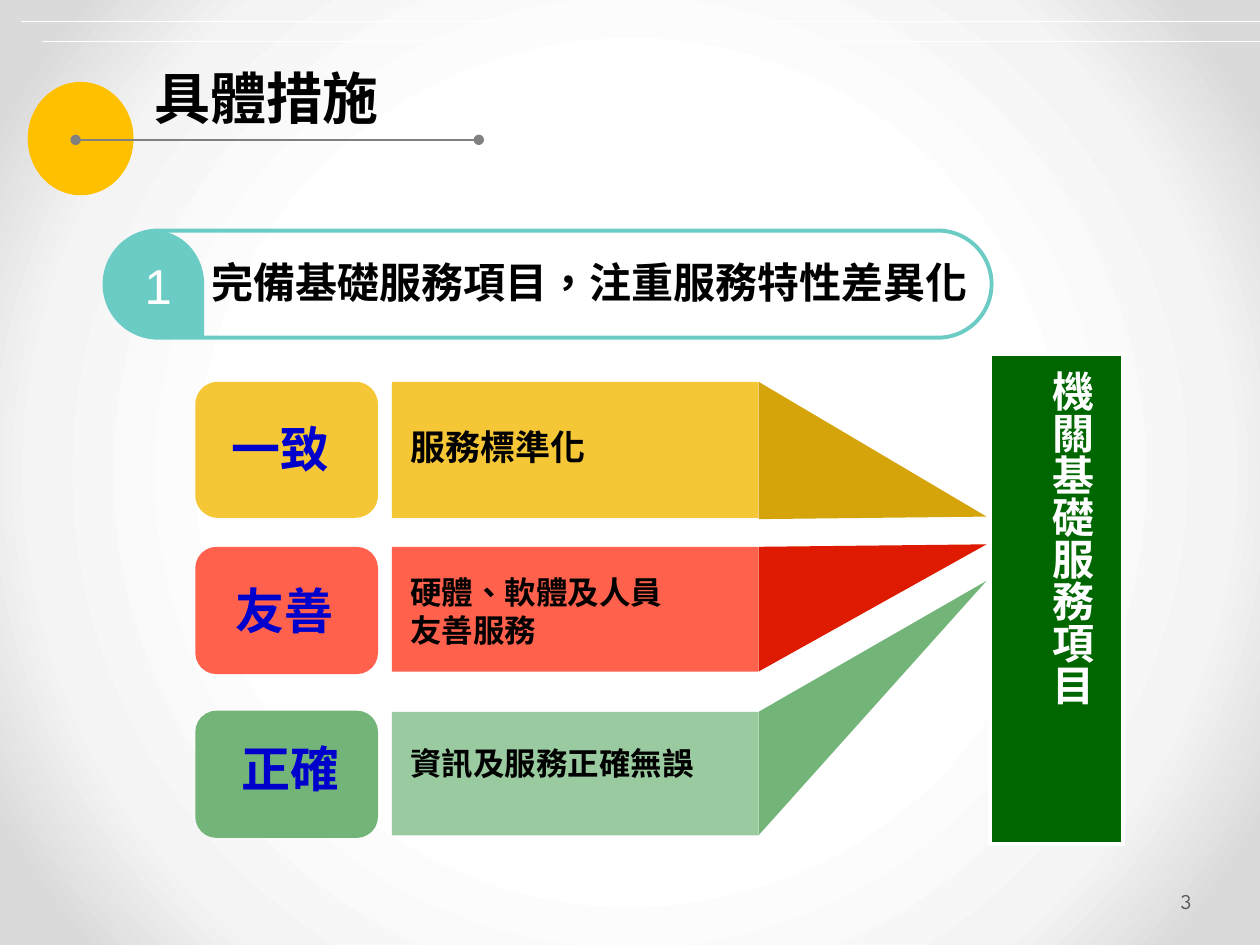
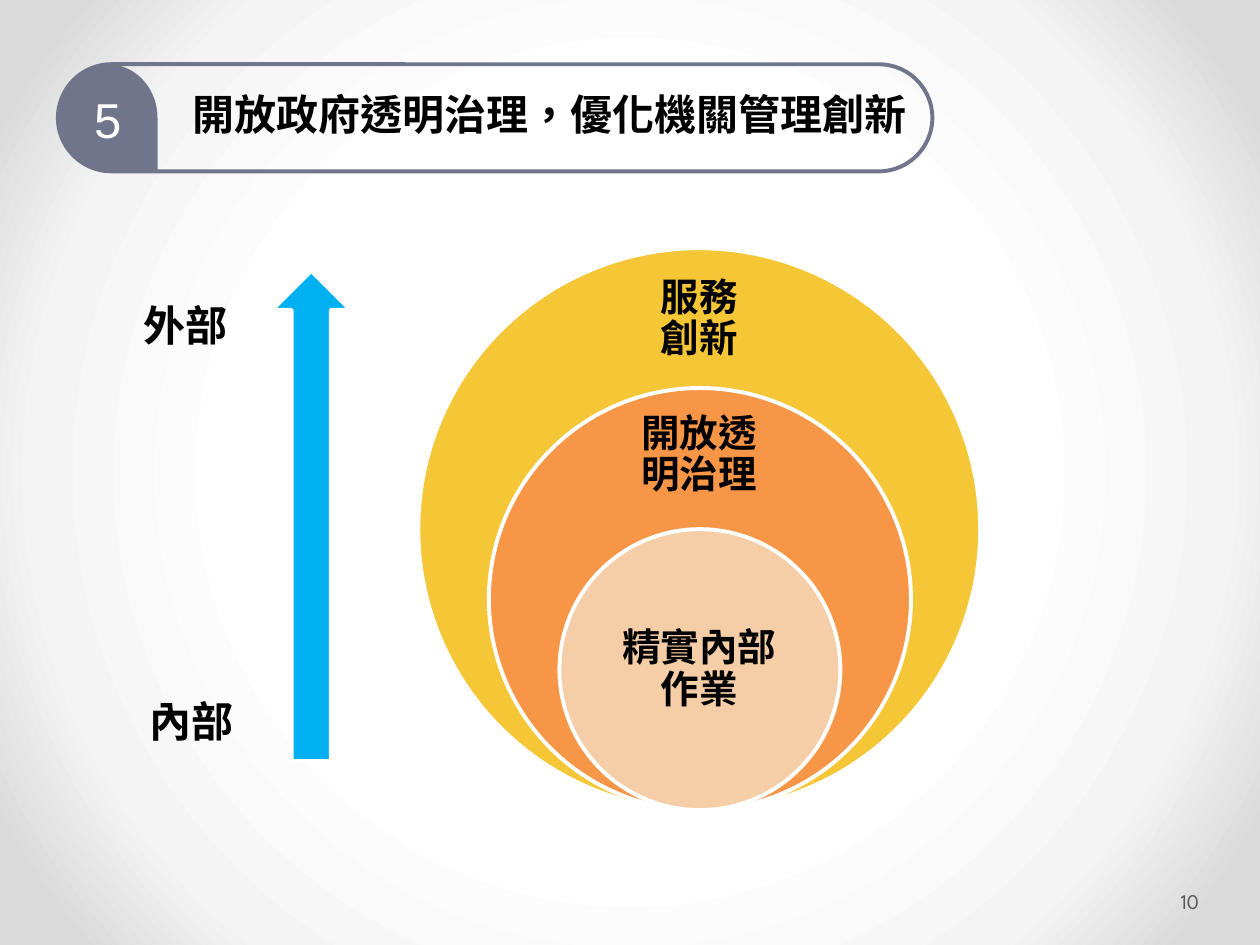
from lxml import etree
from pptx import Presentation
from pptx.dml.color import RGBColor
from pptx.enum.shapes import MSO_CONNECTOR, MSO_SHAPE
from pptx.enum.text import MSO_ANCHOR, MSO_AUTO_SIZE, PP_ALIGN
from pptx.oxml import parse_xml
from pptx.oxml.ns import qn
from pptx.util import Inches, Pt

RECT, ROUND, OVAL = MSO_SHAPE.RECTANGLE, MSO_SHAPE.ROUNDED_RECTANGLE, MSO_SHAPE.OVAL
TEAR, UP_ARROW = MSO_SHAPE.TEAR, MSO_SHAPE.UP_ARROW
LEFT, CENTER = PP_ALIGN.LEFT, PP_ALIGN.CENTER
TOP, MIDDLE = MSO_ANCHOR.TOP, MSO_ANCHOR.MIDDLE
TEXT, OUTLINE = "text", "outline"
ARIAL, NOTO, SPARTAN = "Arial", "Noto Sans CJK SC", "League Spartan"
BLACK, WHITE, BLUE, GREY = "000000", "FFFFFF", "0000CC", "808080"
YELLOW, RED, GREEN = "F5C636", "FF614C", "73B579"
colour = RGBColor.from_string

deck = Presentation()
deck.slide_width, deck.slide_height = Inches(10), Inches(7.5)
UNIT = deck.slide_width // 1000  # the grid has 1000 columns and 750 rows


def add(page, kind, box, fill=None, line=None):
    """Add a shape; box is left, top, width, height, or the points of an OUTLINE."""
    if kind == OUTLINE:
        builder = page.shapes.build_freeform(*box[0], scale=UNIT)
        builder.add_line_segments(box[1:], close=True)
        shape = builder.convert_to_shape()
    elif kind == TEXT:
        return page.shapes.add_textbox(*[cells * UNIT for cells in box])
    else:
        shape = page.shapes.add_shape(kind, *[cells * UNIT for cells in box])
    shape.shadow.inherit = False
    if fill:
        shape.fill.solid()
        shape.fill.fore_color.rgb = colour(fill)
    else:
        shape.fill.background()
    if line:
        shape.line.color.rgb = colour(line)
        shape.line.width = Pt(2.25)
    else:
        shape.line.fill.background()
    return shape


def write(shape, text, size, ink=BLACK, font=ARIAL, bold=True, align=LEFT,
          anchor=TOP, margins=(10, 5), spacing=None):
    frame = shape.text_frame
    frame.text = text
    frame.word_wrap = True
    frame.auto_size = MSO_AUTO_SIZE.NONE
    frame.vertical_anchor = anchor
    frame.margin_left = frame.margin_right = margins[0] * UNIT
    frame.margin_top = frame.margin_bottom = margins[1] * UNIT
    for para in frame.paragraphs:
        para.alignment = align
        para.line_spacing = spacing
        for span in para.runs:
            span.font.size, span.font.bold, span.font.name = Pt(size), bold, font
            span.font.color.rgb = colour(ink)
            properties = span.font._element
            properties.set("lang", "zh-TW")
            etree.SubElement(properties, qn("a:ea")).set("typeface", NOTO)


# Shared background
background = deck.slide_master.background
background.fill.solid()
stops = "".join(f'<a:gs pos="{share}000"><a:srgbClr val="{shade}"/></a:gs>'
                for share, shade in [(50, WHITE), (76, "F4F4F4"), (92, "DADADA")])
solid = background._cSld.find(".//" + qn("a:solidFill"))
solid.getparent().replace(solid, parse_xml(
    '<a:gradFill xmlns:a="http://schemas.openxmlformats.org/drawingml/2006/main" '
    f'rotWithShape="1"><a:gsLst>{stops}</a:gsLst><a:path path="circle">'
    '<a:fillToRect l="50000" t="50000" r="50000" b="50000"/></a:path></a:gradFill>'))

# Shared parts: page number and numbered banner
measures, openness = [deck.slides.add_slide(deck.slide_layouts[5]) for _ in range(2)]
banners = [
    (measures, "3", "1", 83, 183, 704, "6BCBC5", 7),
    (openness, "10", "5", 46, 51, 694, "70758C", 4),
]
for page, page_number, step, left, top, width, tint, shift in banners:
    write(add(page, TEXT, (934, 695, 61, 40)), page_number, 12, "595959", SPARTAN,
          bold=False, anchor=MIDDLE, margins=(3, 5))
    banner = add(page, ROUND, (left, top, width, 85), line=tint)
    banner.adjustments[0] = 0.5
    drop = add(page, TEAR, (left, top, 79, 85), tint)
    drop._element.spPr.get_or_add_xfrm().set("flipV", "1")
    write(add(page, TEXT, (left + shift, top + 15, 71, 57)), step, 28, WHITE,
          bold=False, align=CENTER)

# Titles
heading = add(measures, TEXT, (158, 205, 621, 44))
write(heading, "完備基礎服務項目，注重服務特性差異化", 24, spacing=Pt(24))
for page, box in [(measures, (123, 50, 487, 54)), (openness, (143, 72, 631, 44))]:
    title = page.shapes.title
    title.left, title.top, title.width, title.height = [cells * UNIT for cells in box]
write(measures.shapes.title, "具體措施", 32, margins=(0, 0))
write(openness.shapes.title, "開放政府透明治理，優化機關管理創新", 24, spacing=Pt(24))

# Measures: title ornament
add(measures, OVAL, (22, 65, 84, 90), "FFC000")
rules = [(17, 17, 1000, WHITE, 0.25), (33, 33, 1000, WHITE, 0.25), (60, 111, 380, GREY, 1.5)]
for start, height, end, tint, weight in rules:
    rule = measures.shapes.add_connector(
        MSO_CONNECTOR.STRAIGHT, start * UNIT, height * UNIT, end * UNIT, height * UNIT)
    rule.line.color.rgb = colour(tint)
    rule.line.width = Pt(weight)
    etree.SubElement(rule._element.spPr, qn("a:effectLst"))
for end in ("a:headEnd", "a:tailEnd"):
    etree.SubElement(rule.line._get_or_add_ln(), qn(end)).set("type", "oval")

# Measures: three rows pointing at the service items
rows = [
    ("一致", (174, 327), (303, 108), YELLOW, (303, 108), YELLOW,
     (410, 412), "D4A40A", "服務標準化", 333, 20),
    ("友善", (177, 456), (434, 101), RED, (434, 99), RED,
     (432, 533), "DE1A00", "硬體、軟體及人員\n友善服務", 450, 18),
    ("正確", (182, 581), (564, 101), GREEN, (565, 98), "9ACA9F",
     (461, 663), GREEN, "資訊及服務正確無誤", 586, 18),
]
for (name, name_at, (tag_top, tag_height), tag_fill, (bar_top, bar_height), bar_fill,
     (tip, base), wedge_fill, detail, detail_top, size) in rows:
    add(measures, ROUND, (155, tag_top, 145, tag_height), tag_fill)
    add(measures, RECT, (311, bar_top, 291, bar_height), bar_fill)
    add(measures, OUTLINE, [(602, bar_top), (783, tip), (602, base)], wedge_fill)
    write(add(measures, TEXT, (*name_at, 114, 57)), name, 28, BLUE)
    write(add(measures, TEXT, (316, detail_top, 286, 40)), detail, size, font=NOTO)

add(measures, RECT, (786, 281, 105, 389), "006600", WHITE)
items = add(measures, TEXT, (815, 284, 61, 362))
write(items, "機關基礎服務項目", 24, WHITE, NOTO)
items.text_frame._txBody.bodyPr.set("vert", "eaVert")

# Openness: nested circles resting on one point
RING_CENTER, RING_BOTTOM = 555, 643
rings = [
    (446, YELLOW, "服務\n創新", 220, 67, 156),
    (335, "F79646", "開放透明治理", 330, 63, 156),
    (223, "F5CEA7", "精實內部作業", 476, 112, 170),
]
for diameter, tint, label, label_top, label_height, label_width in rings:
    add(openness, OVAL, (RING_CENTER - diameter // 2, RING_BOTTOM - diameter,
                         diameter, diameter), tint, WHITE)
    label_box = (RING_CENTER - label_width // 2, label_top, label_width, label_height)
    write(add(openness, TEXT, label_box), label, 22, align=CENTER, anchor=MIDDLE,
          margins=(20, 0), spacing=0.9)

# Openness: direction from inside to outside
add(openness, UP_ARROW, (216, 215, 62, 389), "00B0F0", WHITE)
for label, left, top in [("外部", 104, 234), ("內部", 109, 548)]:
    write(add(openness, TEXT, (left, top, 102, 49)), label, 24, font=NOTO, spacing=Pt(28))

deck.save("out.pptx")
